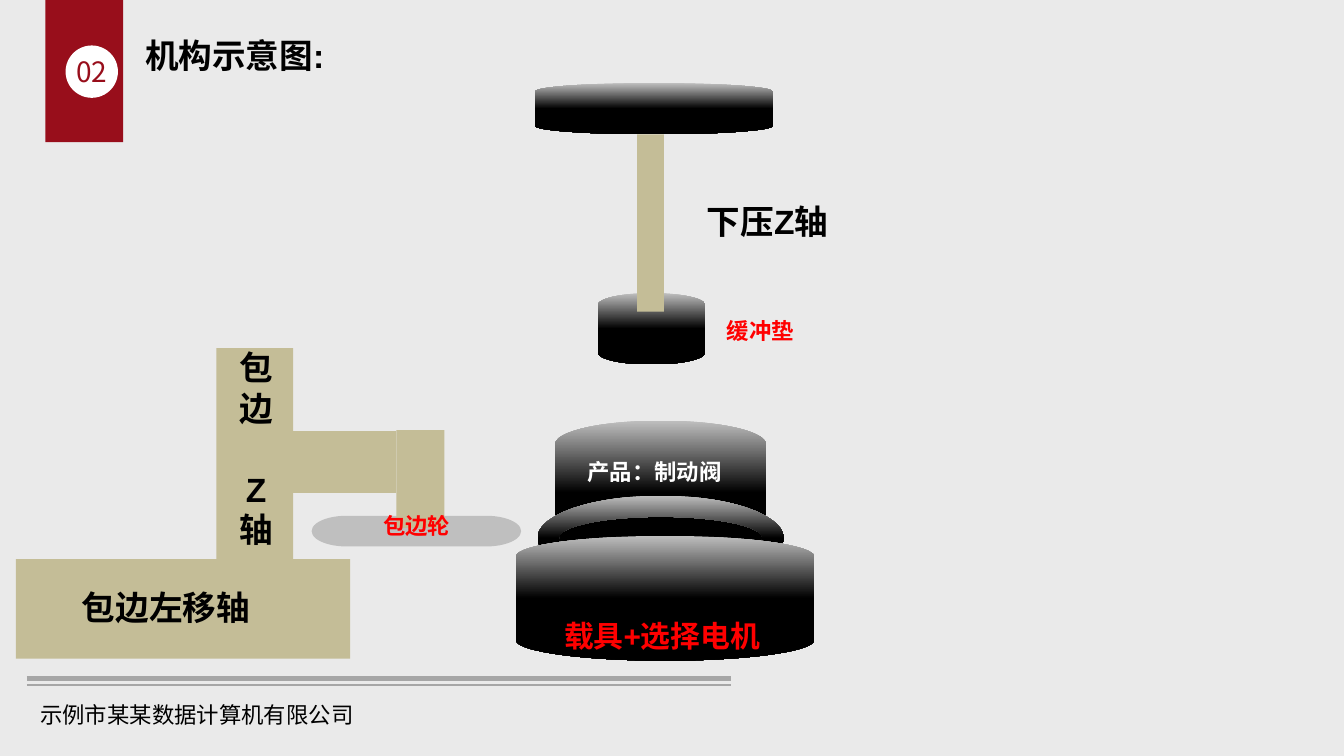
from dataclasses import dataclass
from typing import Any, NamedTuple

from lxml.etree import SubElement
from pptx import Presentation
from pptx.dml.color import RGBColor
from pptx.enum.shapes import MSO_CONNECTOR as Connector, MSO_SHAPE as Preset
from pptx.enum.text import MSO_ANCHOR as Anchor, MSO_AUTO_SIZE as AutoSize, PP_ALIGN as Align
from pptx.oxml.ns import qn
from pptx.util import Cm, Pt


@dataclass(frozen=True)
class Theme:
    background: str = "EAEAEA"
    accent: str = "980E1B"
    rule: str = "A6A6A6"
    silver: str = "BFBFBF"
    frame: str = "C4BD97"
    black: str = "000000"
    white: str = "FFFFFF"
    red: str = "FF0000"
    heading: int = 18
    emphasis: int = 16
    number: int = 15
    small: int = 12
    latin: str = "Arial"
    chinese: str = "Noto Sans CJK SC"


THEME = Theme()


class Box(NamedTuple):
    left: float
    top: float
    width: float
    height: float

    def lengths(self) -> list[Cm]:
        return [Cm(value) for value in self]


class Part(NamedTuple):
    preset: Preset
    box: Box
    color: str | None = None  # None means the metal gradient


class Label(NamedTuple):
    text: str
    box: Box
    size: int = THEME.heading
    color: str = THEME.black
    bold: bool = True
    font: str = THEME.latin
    align: Align = Align.LEFT
    anchor: Anchor = Anchor.TOP
    wrap: bool = True
    gap: float = 0


DISK = Preset.FLOWCHART_MAGNETIC_DISK
DRUM = Preset.FLOWCHART_DIRECT_ACCESS_STORAGE
BAR = Preset.RECTANGLE

RIBBON = Part(BAR, Box(0.86, 0, 1.47, 2.69), THEME.accent)
BADGE = Part(Preset.OVAL, Box(1.24, 0.86, 0.99, 0.99), THEME.white)
BADGE_LABEL = Label("02", BADGE.box, THEME.number, THEME.accent, False, THEME.chinese,
                    Align.CENTER, Anchor.MIDDLE, False)
TITLE = Label("机构示意图:", Box(2.49, 0.53, 12.7, 1.02))

MECHANISM = [
    Part(DISK, Box(10.49, 7.95, 3.99, 2.72)),                 # product
    Part(DISK, Box(11.3, 5.54, 2.03, 1.35)),                  # buffer pad
    Part(BAR, Box(12.04, 2.54, 0.51, 3.35), THEME.frame),     # press rod
    Part(DRUM, Box(5.89, 9.75, 3.96, 0.58), THEME.silver),    # hemming wheel
    Part(Preset.DONUT, Box(10.16, 9.37, 4.65, 1.6)),          # product rim
    Part(BAR, Box(7.49, 8.13, 0.91, 1.85), THEME.frame),      # wheel arm
    Part(BAR, Box(5.08, 8.15, 2.41, 1.17), THEME.frame),      # cross beam
    Part(BAR, Box(4.09, 6.58, 1.45, 3.99), THEME.frame),      # hemming Z axis
    Part(BAR, Box(0.3, 10.57, 6.32, 1.88), THEME.frame),      # left shift axis
    Part(DISK, Box(10.11, 1.57, 4.5, 0.97)),                  # press head
    Part(DISK, Box(9.75, 10.13, 5.64, 2.36)),                 # carrier
]

LABELS = [
    Label("示例市某某数据计算机有限公司", Box(0.51, 13.13, 13.26, 0.86), THEME.small,
          bold=False, font=THEME.chinese),
    Label("下压Z轴", Box(13.11, 3.68, 3, 0.91)),
    Label("包边左移轴", Box(1.3, 10.97, 3.91, 1.04)),
    Label("包边\nZ轴", Box(4.27, 6.76, 1.14, 3.43), align=Align.CENTER,
          anchor=Anchor.MIDDLE, gap=22),
    Label("包边轮", Box(6.99, 9.55, 1.93, 0.64), THEME.small, THEME.red),
    Label("缓冲垫", Box(13.49, 5.87, 1.93, 0.64), THEME.small, THEME.red),
    Label("产品：制动阀", Box(10.85, 8.53, 3.3, 0.64), THEME.small, THEME.white),
    Label("载具+选择电机", Box(10.41, 11.56, 4.57, 0.99), THEME.emphasis, THEME.red),
]

RULE_LEFT, RULE_RIGHT = 0.51, 13.82
RULES = {12.83: 2.75, 12.95: 0.75}  # height on the slide: line weight


def rgb(color: str) -> RGBColor:
    return RGBColor.from_string(color)


def apply(target: Any, values: dict[str, Any]) -> None:
    for name, value in values.items():
        setattr(target, name, value)


def write(shape: Any, label: Label) -> None:
    frame = shape.text_frame
    frame.text = label.text
    apply(frame, {"word_wrap": label.wrap, "auto_size": AutoSize.NONE,
                  "vertical_anchor": label.anchor})
    for index, paragraph in enumerate(frame.paragraphs):
        apply(paragraph, {"alignment": label.align,
                          "space_before": Pt(label.gap if index else 0)})
        for run in paragraph.runs:
            apply(run.font, {"size": Pt(label.size), "bold": label.bold, "name": label.font})
            run.font.color.rgb = rgb(label.color)
            SubElement(run.font._element, qn("a:ea"), typeface=THEME.chinese)


def add_part(slide: Any, part: Part) -> Any:
    shape = slide.shapes.add_shape(part.preset, *part.box.lengths())
    shape.shadow.inherit = False
    shape.line.fill.background()
    if part.color:
        shape.fill.solid()
        shape.fill.fore_color.rgb = rgb(part.color)
    else:
        shape.fill.gradient()
        shape.fill.gradient_angle = 270
        shades = ((0, THEME.silver), (0.5, THEME.black))
        for stop, (position, color) in zip(shape.fill.gradient_stops, shades):
            stop.position = position
            stop.color.rgb = rgb(color)
    return shape


def add_label(slide: Any, label: Label) -> None:
    write(slide.shapes.add_textbox(*label.box.lengths()), label)


def add_rule(slide: Any, height: float, weight: float) -> None:
    rule = slide.shapes.add_connector(Connector.STRAIGHT, Cm(RULE_LEFT), Cm(height),
                                      Cm(RULE_RIGHT), Cm(height))
    rule.line.color.rgb = rgb(THEME.rule)
    rule.line.width = Pt(weight)
    SubElement(rule._element.spPr, qn("a:effectLst"))


def place_title(slide: Any) -> None:
    title = slide.shapes.title
    apply(title, dict(zip(Box._fields, TITLE.box.lengths())))
    write(title, TITLE)


def main() -> None:
    presentation = Presentation()
    apply(presentation, {"slide_width": Cm(25.4), "slide_height": Cm(14.29)})
    slide = presentation.slides.add_slide(presentation.slide_layouts[5])
    slide.background.fill.solid()
    slide.background.fill.fore_color.rgb = rgb(THEME.background)

    for height, weight in RULES.items():
        add_rule(slide, height, weight)
    add_part(slide, RIBBON)
    write(add_part(slide, BADGE), BADGE_LABEL)
    place_title(slide)
    for part in MECHANISM:
        add_part(slide, part)
    for label in LABELS:
        add_label(slide, label)
    presentation.save("out.pptx")


if __name__ == "__main__":
    main()
